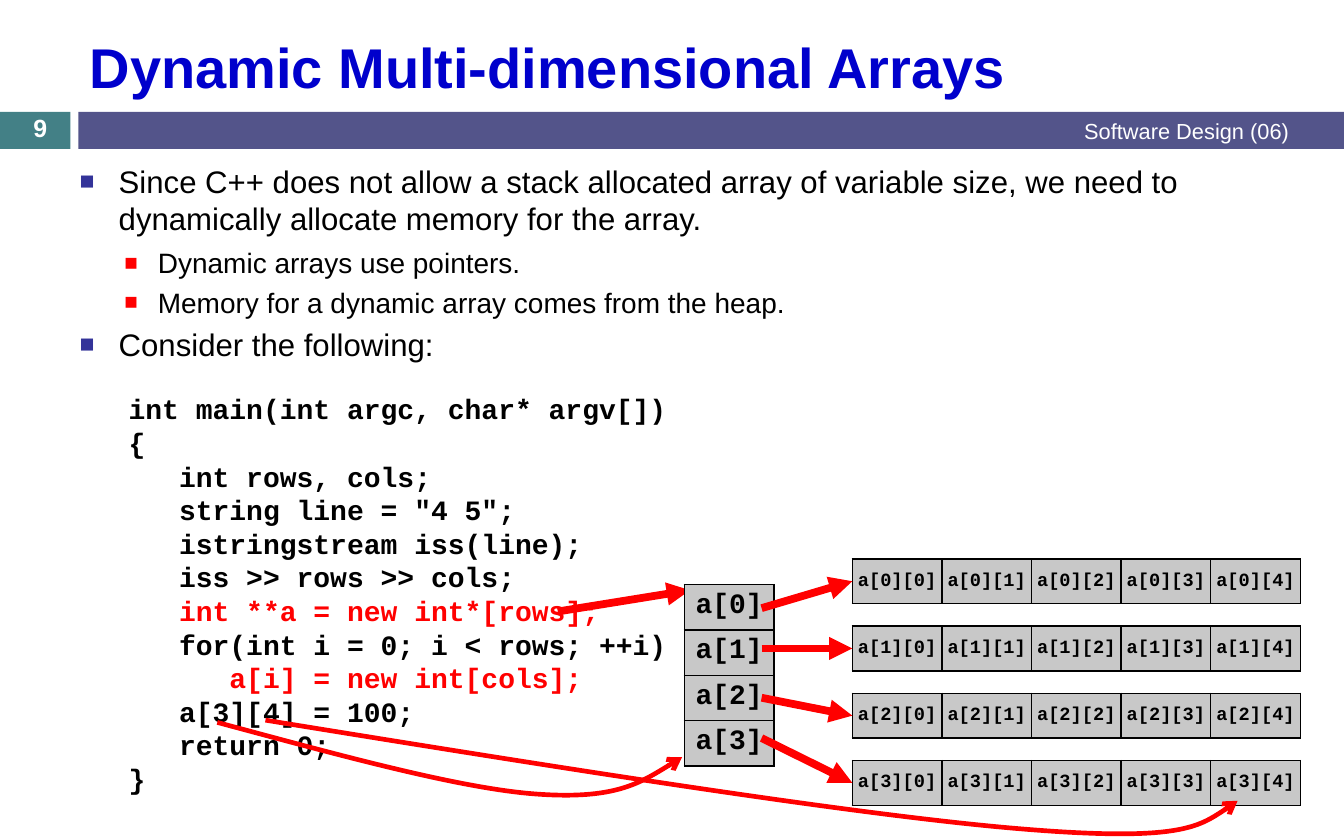
import pptx
import pptx.util
import pptx.dml.color
import pptx.enum.shapes
import pptx.enum.text
import pptx.oxml
import pptx.oxml.ns

Inches = pptx.util.Inches
Pt = pptx.util.Pt
RGBColor = pptx.dml.color.RGBColor
ALIGN = pptx.enum.text.PP_ALIGN
ANCHOR = pptx.enum.text.MSO_ANCHOR

TEAL = RGBColor(0x43, 0x80, 0x86)
INDIGO = RGBColor(0x53, 0x54, 0x8A)
TITLE_BLUE = RGBColor(0x00, 0x00, 0xCC)
BULLET_BLUE = RGBColor(0x33, 0x33, 0x99)
RED = RGBColor(0xFF, 0x00, 0x00)
BLACK = RGBColor(0x00, 0x00, 0x00)
WHITE = RGBColor(0xFF, 0xFF, 0xFF)
CELL_GREY = RGBColor(0xC8, 0xC8, 0xC8)
CODE_FONT = "Courier New"

# Level, space before, text
BULLETS = [
    (0, 7, "Since C++ does not allow a stack allocated array of variable size, "
           "we need to dynamically allocate memory for the array."),
    (1, 5.5, "Dynamic arrays use pointers."),
    (1, 4, "Memory for a dynamic array comes from the heap."),
    (0, 4, "Consider the following:"),
]
# Size, left margin, first-line indent and bullet colour by level
LEVELS = [(20, 0.35, -0.35, BULLET_BLUE), (18, 0.7, -0.3, RED)]

CODE = """int main(int argc, char* argv[])
{
   int rows, cols;
   string line = "4 5";
   istringstream iss(line);
   iss >> rows >> cols;
   int **a = new int*[rows];
   for(int i = 0; i < rows; ++i)
      a[i] = new int[cols];
   a[3][4] = 100;
   return 0;
}"""

ROWS, COLS = 4, 5
ROW_LEFT, ROW_TOP, ROW_STEP = 7.61, 4.99, 0.6
CELL_WIDTH, CELL_HEIGHT = 0.8, 0.4
POINTER_STARTS = [5.43, 5.79, 6.23, 6.59]


def element(markup):
    """Make a DrawingML element from markup without its namespace."""
    tag, rest = markup[:-2].partition(" ")[::2]
    name_space = pptx.oxml.ns.nsdecls("a")
    return pptx.oxml.parse_xml(f"<a:{tag[1:]} {name_space} {rest}/>")


def write(para, text, size=18, font="Arial", color=BLACK, bold=False,
          align=ALIGN.LEFT):
    para.alignment = align
    span = para.add_run()
    span.text = text
    span.font.size = Pt(size)
    span.font.name = font
    span.font.bold = bold
    span.font.color.rgb = color


def place(shape, left, top, width, height):
    shape.left, shape.top = Inches(left), Inches(top)
    shape.width, shape.height = Inches(width), Inches(height)


def add_bar(page, left, width, color):
    bar = page.shapes.add_shape(
        pptx.enum.shapes.MSO_SHAPE.RECTANGLE,
        Inches(left), Inches(1), Inches(width), Inches(0.33))
    bar.shadow.inherit = False
    bar.fill.solid()
    bar.fill.fore_color.rgb = color
    bar.line.fill.background()


def add_box(page, left, top, width, height, anchor=ANCHOR.TOP):
    box = page.shapes.add_textbox(
        Inches(left), Inches(top), Inches(width), Inches(height))
    box.text_frame.word_wrap = True
    box.text_frame.vertical_anchor = anchor
    return box


def add_bullets(body):
    frame = body.text_frame
    frame.auto_size = pptx.enum.text.MSO_AUTO_SIZE.NONE
    frame.vertical_anchor = ANCHOR.TOP
    for index, (level, space, text) in enumerate(BULLETS):
        size, margin, indent, color = LEVELS[level]
        para = frame.add_paragraph() if index else frame.paragraphs[0]
        para.level = level
        para.space_before = Pt(space)
        write(para, text, size=size)
        settings = para._p.get_or_add_pPr()
        settings.set("marL", str(Inches(margin)))
        settings.set("indent", str(Inches(indent)))
        bullet_color = element("<buClr />")
        bullet_color.append(element(f'<srgbClr val="{color}"/>'))
        settings.append(bullet_color)
        settings.append(element('<buSzPct val="80000"/>'))
        settings.append(element('<buFont typeface="Arial"/>'))
        settings.append(element('<buChar char="■"/>'))


def add_code(page):
    box = add_box(page, 1.05, 3.45, 6.08, 3.74)
    box.fill.solid()
    box.fill.fore_color.rgb = WHITE
    for index, line in enumerate(CODE.split("\n")):
        frame = box.text_frame
        para = frame.add_paragraph() if index else frame.paragraphs[0]
        color = RED if "new" in line else BLACK
        write(para, line, font=CODE_FONT, color=color, bold=True)


def add_borders(cell):
    settings = cell._tc.get_or_add_tcPr()
    for index, side in enumerate("LRTB"):
        border = element(f'<ln{side} w="{Pt(1)}"/>')
        fill = element("<solidFill />")
        fill.append(element(f'<srgbClr val="{BLACK}"/>'))
        border.append(fill)
        settings.insert(index, border)


def add_array(page, labels, left, top, cell_height, size, anchor):
    """Add a table of grey cells from a list of rows of labels."""
    rows, cols = len(labels), len(labels[0])
    holder = page.shapes.add_table(
        rows, cols, Inches(left), Inches(top),
        Inches(CELL_WIDTH * cols), Inches(cell_height * rows))
    table = holder.table
    table.first_row = table.horz_banding = False
    for row, texts in enumerate(labels):
        for col, text in enumerate(texts):
            cell = table.cell(row, col)
            cell.margin_left = cell.margin_right = 0
            if anchor == ANCHOR.MIDDLE:
                cell.margin_top = cell.margin_bottom = 0
            cell.vertical_anchor = anchor
            cell.fill.solid()
            cell.fill.fore_color.rgb = CELL_GREY
            add_borders(cell)
            write(cell.text_frame.paragraphs[0], text, size=size,
                  font=CODE_FONT, bold=True, align=ALIGN.CENTER)
    return holder


def style_arrow(arrow, width, head):
    arrow.line.color.rgb = RED
    arrow.line.width = Pt(width)
    arrow.line._get_or_add_ln().append(element(f'<tailEnd type="{head}"/>'))


def add_arrow(page, start, end):
    arrow = page.shapes.add_connector(
        pptx.enum.shapes.MSO_CONNECTOR.STRAIGHT,
        *[Inches(value) for value in start + end])
    style_arrow(arrow, 5, "triangle")
    arrow._element.spPr.append(element("<effectLst />"))
    return arrow


def add_curve(page, points):
    """Draw a curved arrow: a start, then three Bézier points per section."""
    points = [(Inches(x), Inches(y)) for x, y in points]
    builder = page.shapes.build_freeform(*points[0])
    builder.add_line_segments(points[1:], close=False)
    curve = builder.convert_to_shape()
    # Join every three straight segments into one cubic section
    lines = list(curve._element.iter(pptx.oxml.ns.qn("a:lnTo")))
    for first in range(0, len(lines), 3):
        section = element("<cubicBezTo />")
        lines[first].addprevious(section)
        for line in lines[first:first + 3]:
            section.append(line[0])
            line.getparent().remove(line)
    curve.fill.background()
    curve.shadow.inherit = False
    style_arrow(curve, 3, "arrow")


def main():
    deck = pptx.Presentation()
    deck.slide_width, deck.slide_height = Inches(12), Inches(7.5)
    page = deck.slides.add_slide(deck.slide_layouts[1])
    title, body = page.placeholders

    # Header
    add_bar(page, 0, 0.63, TEAL)
    add_bar(page, 0.7, 11.3, INDIGO)
    place(title, 0.7, 0.19, 10.91, 0.8)
    title.text_frame.vertical_anchor = ANCHOR.MIDDLE
    write(title.text_frame.paragraphs[0], "Dynamic Multi-dimensional Arrays",
          size=36, color=TITLE_BLUE, bold=True)
    course = add_box(page, 4.5, 0.99, 7.11, 0.35, ANCHOR.MIDDLE)
    write(course.text_frame.paragraphs[0], "Software Design (06)",
          size=14, color=WHITE, align=ALIGN.RIGHT)
    number = add_box(page, 0, 0.99, 0.72, 0.3, ANCHOR.MIDDLE)
    write(number.text_frame.paragraphs[0], "9",
          size=16, color=WHITE, bold=True, align=ALIGN.CENTER)

    # Explanation and code
    place(body, 0.61, 1.4, 11.01, 1.96)
    add_bullets(body)
    add_code(page)

    # Array of pointers
    add_arrow(page, (4.98, 5.46), (6.16, 5.27))
    add_array(page, [[f"a[{row}]"] for row in range(ROWS)],
              6.11, 5.22, 0.405, 18, ANCHOR.TOP)

    # Rows that the pointers lead to
    for row, start in enumerate(POINTER_STARTS):
        top = ROW_TOP + row * ROW_STEP
        cells = add_array(page, [[f"a[{row}][{col}]" for col in range(COLS)]],
                          ROW_LEFT, top, CELL_HEIGHT, 12, ANCHOR.MIDDLE)
        arrow = add_arrow(page, (6.8, start), (ROW_LEFT, top + CELL_HEIGHT / 2))
        arrow.end_connect(cells, 1)

    # From the two subscripts to the elements they select
    add_curve(page, [(1.94, 6.45), (3.02, 6.74), (4.1, 7.04), (4.79, 7.09),
                     (5.49, 7.14), (5.79, 6.95), (6.09, 6.76)])
    add_curve(page, [(2.37, 6.43), (5.02, 6.86), (7.66, 7.28), (9.11, 7.4),
                     (10.55, 7.52), (10.8, 7.33), (11.05, 7.15)])

    deck.save("out.pptx")


if __name__ == "__main__":
    main()
